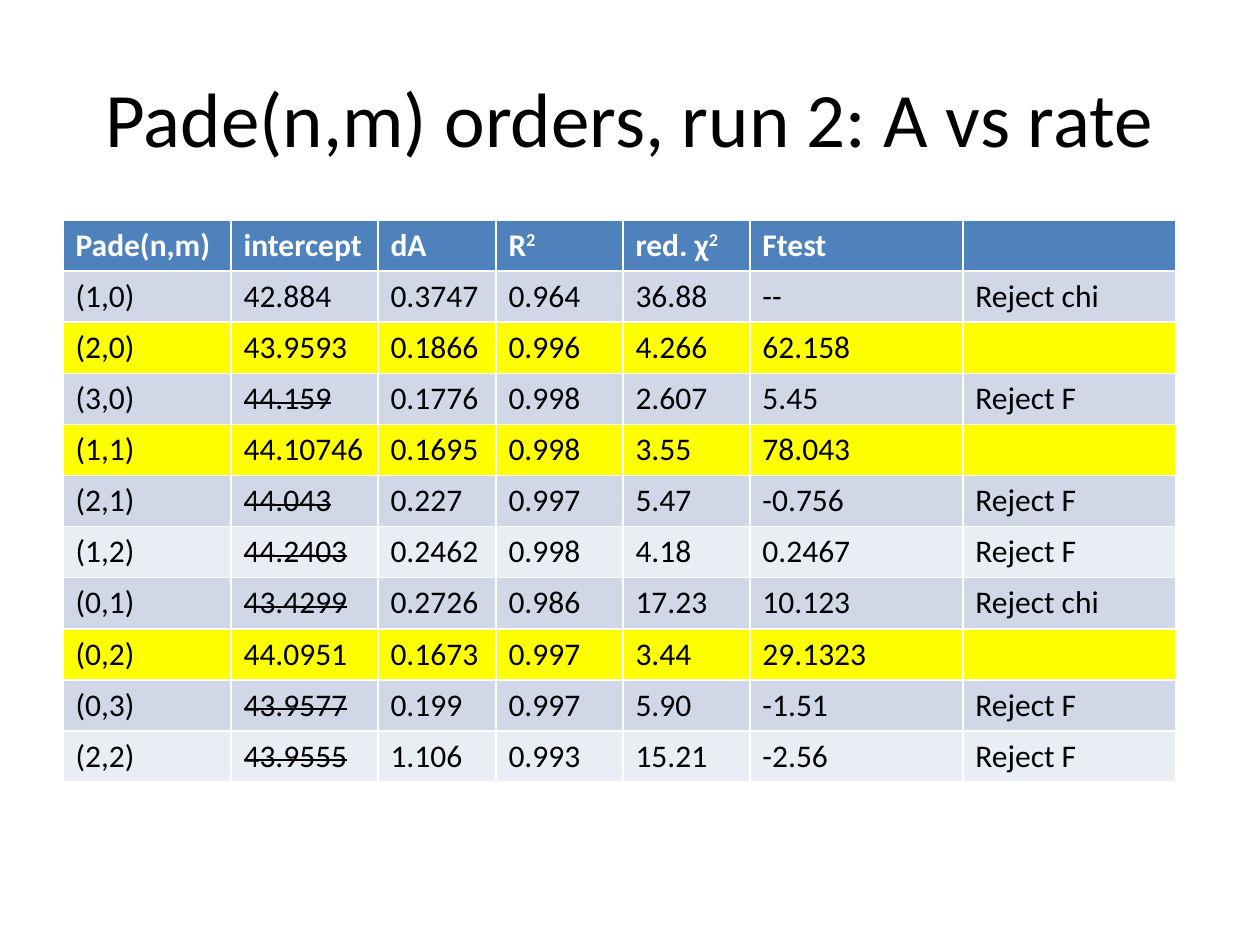
from pptx import Presentation
from pptx import util as u
from pptx.dml.color import RGBColor
from pptx.enum import text

PX = u.Inches(1) / 126
FONT = "Calibri"
BLACK, WHITE = "000000", "FFFFFF"
HEADER_FILL, ACCEPTED_FILL = "4F81BD", "FFFF00"
BAND_FILLS = ("D0D8E8", "E9EDF4")

TITLE = "Pade(n,m) orders, run 2: A vs rate"
COLUMN_WIDTHS = (168, 147, 118, 127, 127, 213, 213)
ROW_HEIGHT = 51
# Each header is its text and its superscript.
HEADERS = (("Pade(n,m)", ""), ("intercept", ""), ("dA", ""), ("R", "2"),
           ("red. χ", "2"), ("Ftest", ""), ("", ""))
FITS = (
    ("(1,0)", "42.884", "0.3747", "0.964", "36.88", "--", "Reject chi"),
    ("(2,0)", "43.9593", "0.1866", "0.996", "4.266", "62.158", ""),
    ("(3,0)", "44.159", "0.1776", "0.998", "2.607", "5.45", "Reject F"),
    ("(1,1)", "44.10746", "0.1695", "0.998", "3.55", "78.043", ""),
    ("(2,1)", "44.043", "0.227", "0.997", "5.47", "-0.756", "Reject F"),
    ("(1,2)", "44.2403", "0.2462", "0.998", "4.18", "0.2467", "Reject F"),
    ("(0,1)", "43.4299", "0.2726", "0.986", "17.23", "10.123", "Reject chi"),
    ("(0,2)", "44.0951", "0.1673", "0.997", "3.44", "29.1323", ""),
    ("(0,3)", "43.9577", "0.199", "0.997", "5.90", "-1.51", "Reject F"),
    ("(2,2)", "43.9555", "1.106", "0.993", "15.21", "-2.56", "Reject F"),
)


def px(n):
    return u.Emu(round(n * PX))


def color(value):
    return RGBColor.from_string(value)


def add_run(p, words, size, ink, bold=False, **attributes):
    """Add a run; attributes go to its run properties, such as strike."""
    r = p.add_run()
    r.text = words
    r.font.name = FONT
    r.font.size = u.Pt(size)
    r.font.bold = bold
    r.font.color.rgb = color(ink)
    for name, value in attributes.items():
        r.font._element.set(name, value)


def fill_cell(cell, fill):
    cell.fill.solid()
    cell.fill.fore_color.rgb = color(fill)
    return cell.text_frame.paragraphs[0]


def place_title(s, left, top, width, height):
    sp = s.shapes.title
    sp.left, sp.top, sp.width, sp.height = map(px, (left, top, width, height))
    tf = sp.text_frame
    tf.word_wrap = True
    tf.vertical_anchor = text.MSO_ANCHOR.MIDDLE
    p = tf.paragraphs[0]
    p.alignment = text.PP_ALIGN.CENTER
    add_run(p, TITLE, 44, BLACK)


def place_fit_table(s, left, top):
    row_count = len(FITS) + 1
    table = s.shapes.add_table(
        row_count, len(COLUMN_WIDTHS), px(left), px(top),
        px(sum(COLUMN_WIDTHS)), px(ROW_HEIGHT * row_count)).table
    for column, width in zip(table.columns, COLUMN_WIDTHS):
        column.width = px(width)
    for row in table.rows:
        row.height = px(ROW_HEIGHT)

    for col, (label, power) in enumerate(HEADERS):
        p = fill_cell(table.cell(0, col), HEADER_FILL)
        if label:
            add_run(p, label, 18, WHITE, bold=True)
        if power:
            add_run(p, power, 18, WHITE, bold=True, baseline="30000")

    for row, fit in enumerate(FITS):
        ftest, verdict = fit[-2:]
        fill = BAND_FILLS[row % 2] if verdict else ACCEPTED_FILL
        struck = verdict and ftest != "--"
        for col, value in enumerate(fit):
            p = fill_cell(table.cell(row + 1, col), fill)
            if value:
                style = {"strike": "sngStrike"} if struck and col == 1 else {}
                add_run(p, value, 18, BLACK, **style)


def main():
    prs = Presentation()
    prs.slide_width, prs.slide_height = px(1260), px(945)
    s = prs.slides.add_slide(prs.slide_layouts[5])
    place_title(s, 63, 38, 1134, 158)
    place_fit_table(s, 63, 220)
    prs.save("out.pptx")


if __name__ == "__main__":
    main()
